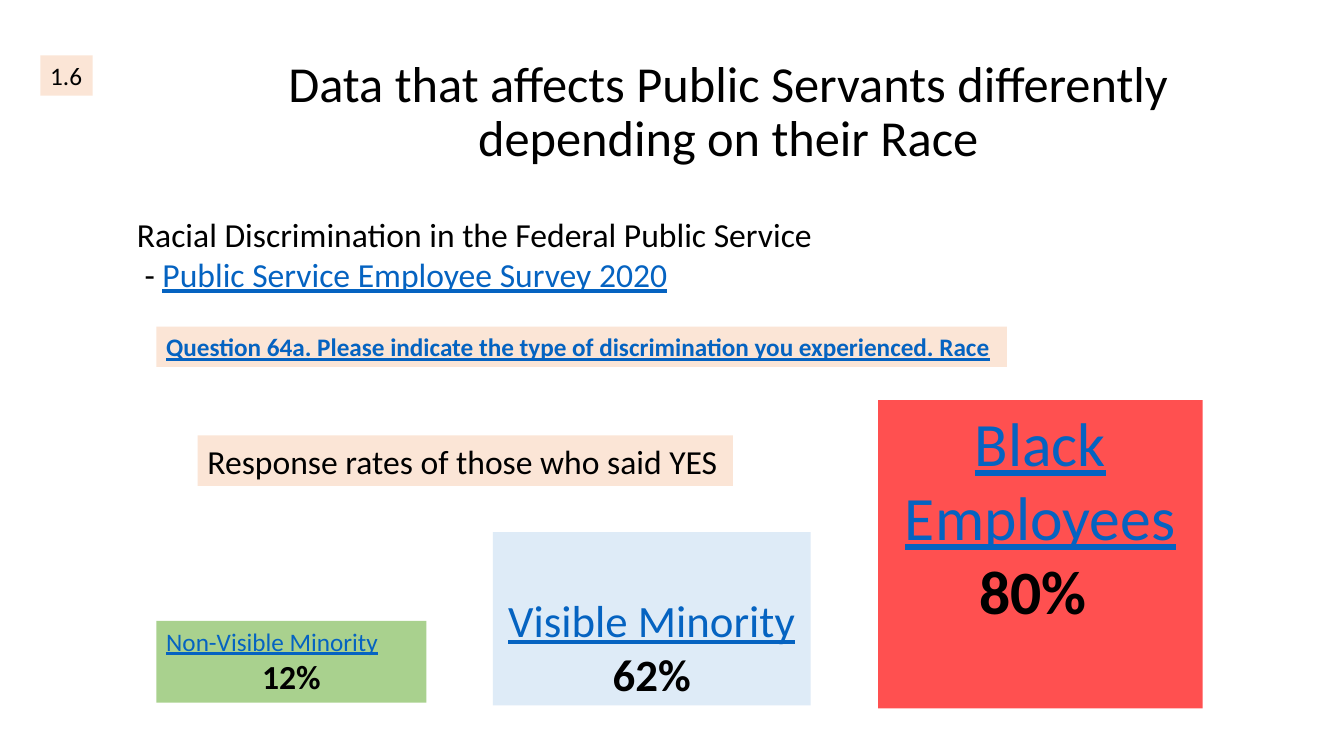
import dataclasses

import pptx
import pptx.dml.color
import pptx.enum.shapes
import pptx.enum.text
import pptx.util

ALIGN = pptx.enum.text.PP_ALIGN
ANCHOR = pptx.enum.text.MSO_ANCHOR
FIT = pptx.enum.text.MSO_AUTO_SIZE


@dataclasses.dataclass(frozen=True)
class Theme:
    font: str = "Calibri"
    ink: str = "000000"
    link: str = "0563C1"
    peach: str = "FBE5D6"
    red: str = "FF5050"
    blue: str = "DEEBF7"
    green: str = "A9D18E"
    small: int = 18
    body: int = 24
    large: int = 32
    title: int = 36
    huge: int = 44


@dataclasses.dataclass(frozen=True)
class Span:
    text: str
    size: int
    bold: bool = False
    linked: bool = False


class SurveySlide:
    """Holds the theme and the current page; areas are percentages of the page."""

    def __init__(self, deck, theme):
        self.deck = deck
        self.theme = theme
        self.page = deck.slides.add_slide(deck.slide_layouts.get_by_name("Title Only"))

    def area(self, left, top, width, height):
        across, down = self.deck.slide_width, self.deck.slide_height
        return [int(share * side / 100) for share, side in
                ((left, across), (top, down), (width, across), (height, down))]

    def style(self, run, size, bold=False, linked=False):
        font = run.font
        font.name = self.theme.font
        font.size = pptx.util.Pt(size)
        font.bold = bold
        font.underline = linked
        color = self.theme.link if linked else self.theme.ink
        font.color.rgb = pptx.dml.color.RGBColor.from_string(color)

    def title(self, text, area):
        box = self.page.shapes.title
        box.left, box.top, box.width, box.height = self.area(*area)
        frame = box.text_frame
        frame.text = text
        frame.word_wrap = True
        frame.auto_size = FIT.NONE
        frame.vertical_anchor = ANCHOR.MIDDLE
        para = frame.paragraphs[0]
        para.alignment = ALIGN.CENTER
        para.line_spacing = 0.9
        self.style(para.runs[0], self.theme.title)

    def fill_text(self, box, lines, wrap=False, anchor=ANCHOR.TOP):
        """Fill a box from (alignment, spans) lines; unwrapped boxes fit their text."""
        frame = box.text_frame
        frame.word_wrap = wrap
        frame.auto_size = FIT.NONE if wrap else FIT.SHAPE_TO_FIT_TEXT
        frame.vertical_anchor = anchor
        for index, (alignment, spans) in enumerate(lines):
            para = frame.add_paragraph() if index else frame.paragraphs[0]
            para.alignment = alignment
            for span in spans:
                run = para.add_run()
                run.text = span.text
                self.style(run, span.size, span.bold, span.linked)

    def text(self, area, lines):
        self.fill_text(self.page.shapes.add_textbox(*self.area(*area)), lines)

    def panel(self, area, fill, lines, wrap=False, anchor=ANCHOR.TOP):
        box = self.page.shapes.add_shape(
            pptx.enum.shapes.MSO_SHAPE.RECTANGLE, *self.area(*area))
        box.shadow.inherit = False
        box.fill.solid()
        box.fill.fore_color.rgb = pptx.dml.color.RGBColor.from_string(fill)
        box.line.fill.background()
        self.fill_text(box, lines, wrap, anchor)

    def note(self, area, span):
        self.panel(area, self.theme.peach, [(ALIGN.LEFT, [span])])


def main():
    deck = pptx.Presentation()
    deck.slide_width = pptx.util.Inches(13.33)
    deck.slide_height = pptx.util.Inches(7.5)
    theme = Theme()
    slide = SurveySlide(deck, theme)

    slide.title("Data that affects Public Servants differently depending on their Race",
                (15.23, 5.33, 77.93, 19.33))
    slide.text((9.45, 27.6, 52.8, 12.13), [
        (ALIGN.LEFT, [Span("Racial Discrimination in the Federal Public Service", theme.body)]),
        (ALIGN.LEFT, [Span(" - ", theme.body),
                      Span("Public Service Employee Survey 2020", theme.body, linked=True)]),
    ])

    question = "Question 64a. Please indicate the type of discrimination you experienced. Race"
    slide.note((11.63, 43.2, 63.3, 5.33), Span(question, theme.small, bold=True, linked=True))
    slide.note((14.7, 57.6, 39.83, 6.67),
               Span("Response rates of those who said YES", theme.body))
    slide.note((3, 7.33, 3.9, 5.33), Span("1.6", theme.small))

    slide.panel((65.33, 52.93, 24.15, 40.8), theme.red, [
        (ALIGN.CENTER, [Span("Black Employees ", theme.huge, linked=True),
                        Span("80% ", theme.huge, bold=True)]),
    ], wrap=True)
    slide.panel((36.68, 70.4, 23.63, 22.93), theme.blue, [
        (ALIGN.CENTER, [Span("Visible Minority", theme.large, linked=True)]),
        (ALIGN.CENTER, [Span("62%", theme.large, bold=True)]),
    ], wrap=True, anchor=ANCHOR.BOTTOM)
    slide.panel((11.63, 82.13, 20.1, 10.8), theme.green, [
        (ALIGN.LEFT, [Span("Non-Visible Minority", theme.small, linked=True)]),
        (ALIGN.CENTER, [Span("12%", theme.body, bold=True)]),
    ], wrap=True)

    deck.save("out.pptx")


if __name__ == "__main__":
    main()
